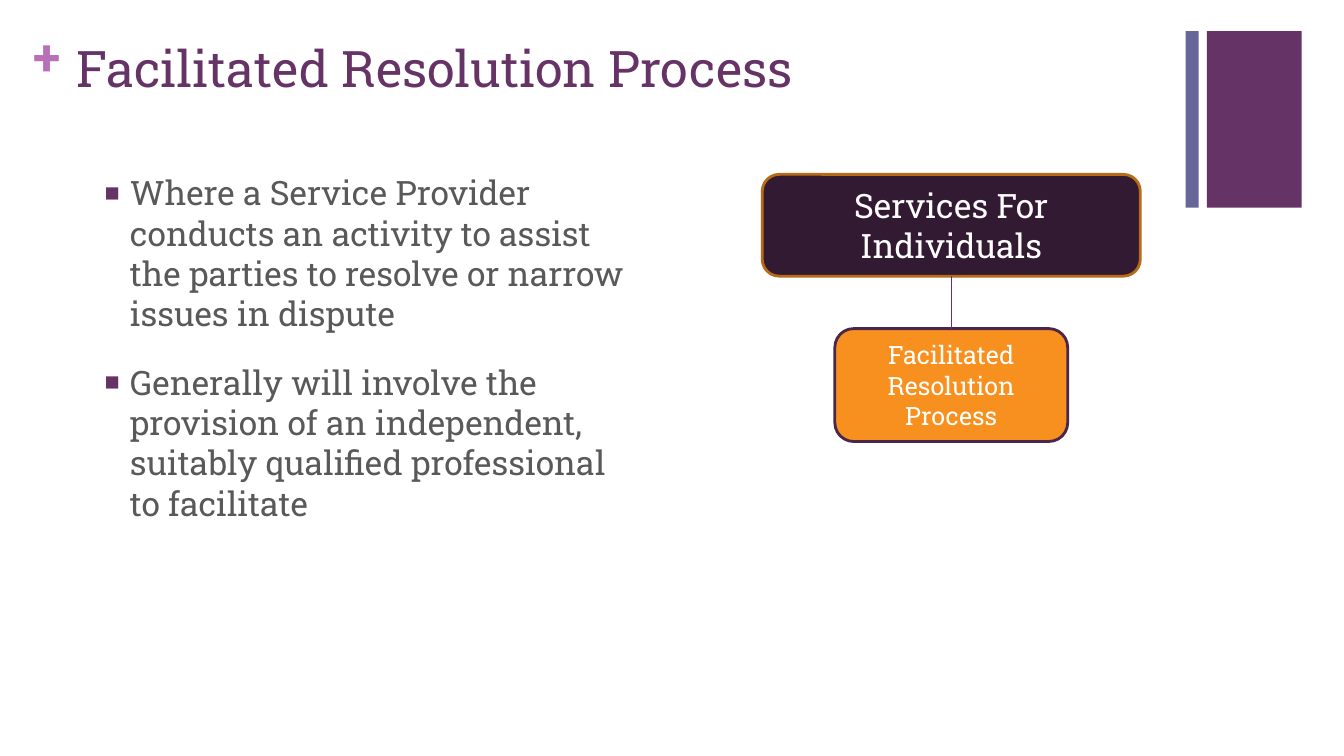
import pptx
import pptx.dml.color
import pptx.enum.shapes
import pptx.enum.text
import pptx.oxml
import pptx.oxml.ns
import pptx.util

Inches = pptx.util.Inches
Pt = pptx.util.Pt
SHAPE = pptx.enum.shapes.MSO_SHAPE
ALIGN = pptx.enum.text.PP_ALIGN
ANCHOR = pptx.enum.text.MSO_ANCHOR

FONT = "Roboto Slab"
PURPLE = "663366"
WHITE = "FFFFFF"
POINTS = [
    "Where a Service Provider conducts an activity to assist the parties to resolve or narrow issues in dispute",
    "Generally will involve the provision of an independent, suitably qualified professional to facilitate",
]


def rgb(color):
    """Turn a hex string into a colour."""
    return pptx.dml.color.RGBColor.from_string(color)


def format_paragraph(p, size, color, align=ALIGN.LEFT, bold=False):
    """Align a paragraph and format its runs."""
    p.alignment = align
    for r in p.runs:
        r.font.name = FONT
        r.font.size = Pt(size)
        r.font.bold = bold
        r.font.color.rgb = rgb(color)


def add_block(s, kind, x, y, w, h, fill, line=None):
    """Add a filled shape, outlined if a line colour is given."""
    sp = s.shapes.add_shape(kind, Inches(x), Inches(y), Inches(w), Inches(h))
    sp.shadow.inherit = False
    sp.fill.solid()
    sp.fill.fore_color.rgb = rgb(fill)
    if line:
        sp.line.color.rgb = rgb(line)
        sp.line.width = Pt(2)
    else:
        sp.line.fill.background()
    return sp


def add_bands(s, x, y, w, h):
    """Draw the narrow and wide corner bands."""
    narrow, wide = 0.13, 0.94
    add_block(s, SHAPE.RECTANGLE, x, y, narrow, h, "666699")
    add_block(s, SHAPE.RECTANGLE, x + w - wide, y, wide, h, PURPLE)


def add_heading(s, x, y, w, h):
    """Place the plus sign and the slide title."""
    sp = s.shapes.add_textbox(Inches(x), Inches(y), Inches(0.38), Inches(0.61))
    tf = sp.text_frame
    tf.margin_left = tf.margin_right = tf.margin_top = tf.margin_bottom = 0
    tf.text = "+"
    format_paragraph(tf.paragraphs[0], 36, "B870B8", bold=True)

    indent, drop = 0.33, 0.07
    title = s.shapes.title
    title.left, title.top = Inches(x + indent), Inches(y + drop)
    title.width, title.height = Inches(w - indent), Inches(h - drop)
    tf = title.text_frame
    tf.text = "Facilitated Resolution Process"
    tf.vertical_anchor = ANCHOR.TOP
    tf.auto_size = pptx.enum.text.MSO_AUTO_SIZE.NONE
    format_paragraph(tf.paragraphs[0], 36, PURPLE)


def add_bullet(p):
    """Give a paragraph a hanging square bullet."""
    pPr = p._p.get_or_add_pPr()
    pPr.set("marL", str(Inches(0.25)))
    pPr.set("indent", str(-Inches(0.25)))
    ns = pptx.oxml.ns.nsdecls("a")
    for xml in (
        f'<a:buClr {ns}><a:srgbClr val="{PURPLE}"/></a:buClr>',
        f'<a:buSzPct {ns} val="75000"/>',
        f'<a:buFont {ns} typeface="Arial"/>',
        f'<a:buChar {ns} char="■"/>',
    ):
        pPr.append(pptx.oxml.parse_xml(xml))


def add_points(s, x, y, w, h):
    """Write the bulleted text."""
    sp = s.shapes.add_textbox(Inches(x), Inches(y), Inches(w), Inches(h))
    tf = sp.text_frame
    tf.word_wrap = True
    tf.text = "\n".join(POINTS)
    for p in tf.paragraphs:
        format_paragraph(p, 24, "595959")
        p.space_before = Pt(20)
        add_bullet(p)


def add_node(s, x, y, w, h, text, size, fill, line):
    """Add a rounded, labelled box of the chart."""
    sp = add_block(s, SHAPE.ROUNDED_RECTANGLE, x, y, w, h, fill, line)
    tf = sp.text_frame
    tf.word_wrap = True
    tf.vertical_anchor = ANCHOR.MIDDLE
    tf.text = text
    format_paragraph(tf.paragraphs[0], size, WHITE, ALIGN.CENTER)
    return sp


def add_hierarchy(s, x, y, w, h):
    """Draw the parent box, its child below and the line between them."""
    child_w, child_h = 2.31, 1.12
    child = add_node(s, x + (w - child_w) / 2, y + h - child_h, child_w, child_h,
                     "Facilitated Resolution Process", 18, "F7901E", "4B264B")
    parent = add_node(s, x, y, w, 1.01, "Services For Individuals", 24, "331A33", "B76B16")
    link = s.shapes.add_connector(pptx.enum.shapes.MSO_CONNECTOR.STRAIGHT, 0, 0, 0, 0)
    link.begin_connect(child, 0)
    link.end_connect(parent, 2)
    link.line.color.rgb = rgb("653165")
    link.line.width = Pt(1)
    ns = pptx.oxml.ns.nsdecls("a")
    link._element.spPr.append(pptx.oxml.parse_xml(f"<a:effectLst {ns}/>"))


def main():
    """Build and save the slide."""
    prs = pptx.Presentation()
    prs.slide_width, prs.slide_height = Inches(13.33), Inches(7.5)
    s = prs.slides.add_slide(prs.slide_layouts[5])
    add_bands(s, 11.76, 0.31, 1.15, 1.75)
    add_heading(s, 0.33, 0.25, 10.57, 1.32)
    add_points(s, 0.94, 1.66, 5.41, 4.62)
    add_hierarchy(s, 7.56, 1.73, 3.75, 2.65)
    prs.save("out.pptx")


if __name__ == "__main__":
    main()
